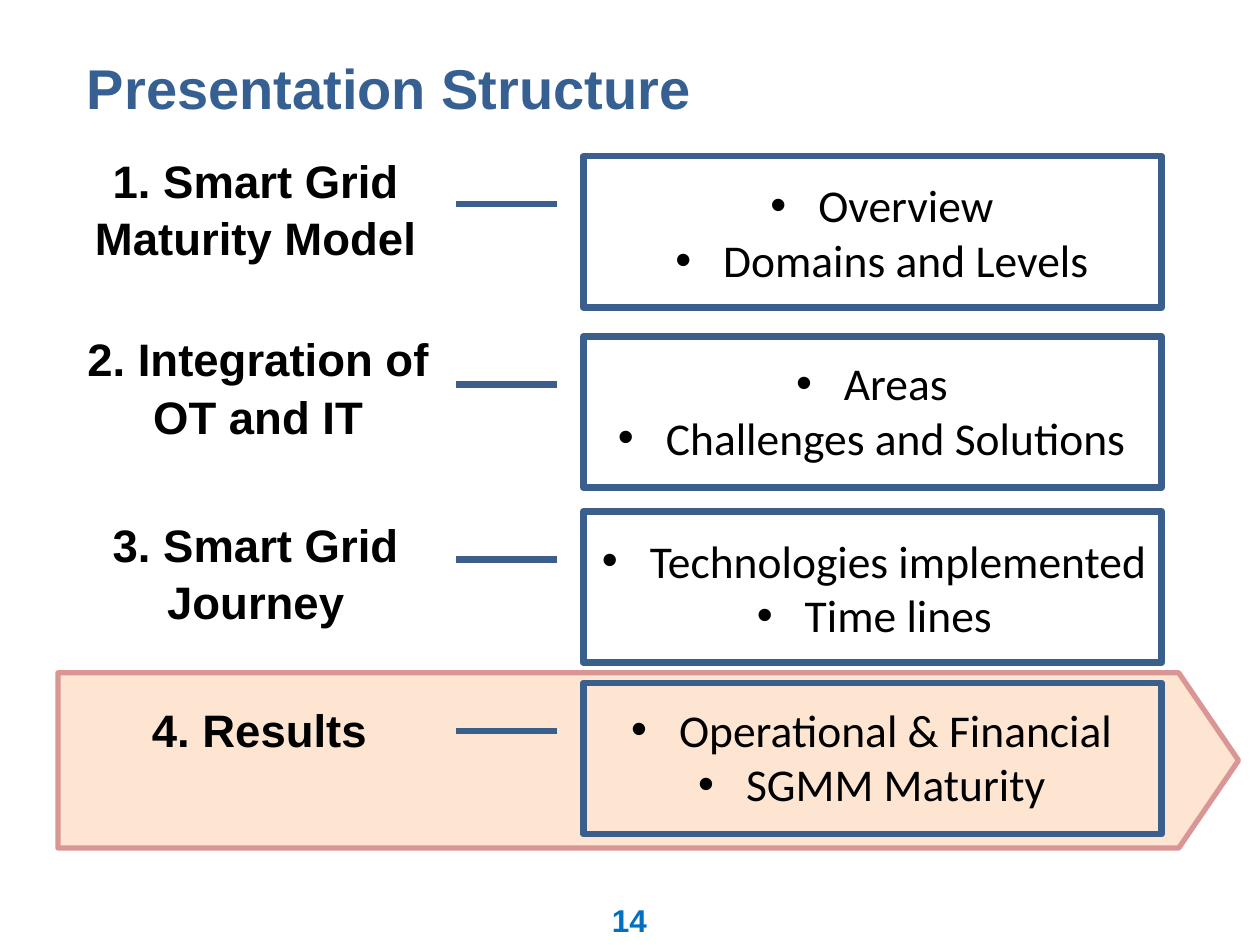
from dataclasses import dataclass

from lxml.etree import SubElement
from pptx import Presentation
from pptx.dml.color import RGBColor
from pptx.enum.shapes import MSO_SHAPE as Shape
from pptx.enum.text import MSO_ANCHOR as Anchor, MSO_AUTO_SIZE as Fit, PP_ALIGN as Align
from pptx.oxml.ns import qn
from pptx.util import Inches, Pt

COLS, ROWS = 100, 75
HUES = {"title": "376092", "page": "0070C0", "text": "000000",
        "frame": "3A5F8C", "arrow": "FAC090", "edge": "D99694"}

deck = Presentation()
deck.slide_width, deck.slide_height = Inches(10), Inches(7.5)
UNIT_X, UNIT_Y = deck.slide_width / COLS, deck.slide_height / ROWS


@dataclass
class Box:
    """A place on the grid, in columns and rows."""
    x: float
    y: float
    w: float
    h: float

    def place(self) -> tuple:
        return (round(self.x * UNIT_X), round(self.y * UNIT_Y),
                round(self.w * UNIT_X), round(self.h * UNIT_Y))


@dataclass
class Part:
    """One row: its label, the frame's top and its list."""
    label: list
    spot: Box
    top: float
    points: list
    list_box: Box


PARTS = [
    Part(["1. Smart Grid Maturity Model"], Box(1.8, 11.4, 37, 10), 12.4,
         ["Overview", "Domains and Levels"], Box(47.4, 13.6, 44, 10)),
    Part(["2. Integration of", "OT and IT"], Box(2, 25.6, 37, 10), 26.7,
         ["Areas", "Challenges and Solutions"], Box(45.2, 27.7, 46.8, 10)),
    Part(["3. Smart Grid Journey"], Box(1.8, 40.3, 37, 11), 40.6,
         ["Technologies implemented", "Time lines"], Box(45.4, 41.8, 46.8, 10)),
    Part(["4. Results"], Box(2.1, 55, 37, 6), 54.2,
         ["Operational & Financial", "SGMM Maturity"], Box(45.2, 55.2, 46.8, 10)),
]


def tint(name: str) -> RGBColor:
    return RGBColor.from_string(HUES[name])


def move(shape, box: Box) -> None:
    shape.left, shape.top, shape.width, shape.height = box.place()


def write(shape, lines: list, size: int, hue: str, face: str = "Arial",
          bold: bool = True, align=Align.CENTER, anchor=Anchor.TOP,
          space: float = 1, dots: bool = False) -> None:
    frame = shape.text_frame
    frame.word_wrap = True
    frame.auto_size = Fit.SHAPE_TO_FIT_TEXT if dots else Fit.NONE
    frame.vertical_anchor = anchor
    for i, line in enumerate(lines):
        para = frame.paragraphs[0] if i == 0 else frame.add_paragraph()
        props = para._p.get_or_add_pPr()
        props.set("marL", str(Inches(0.5) if dots else 0))
        props.set("indent", str(Inches(-0.38) if dots else 0))
        para.alignment = align
        para.line_spacing = space
        para.space_before = Pt(0)
        if dots:
            SubElement(props, qn("a:buFont")).set("typeface", "Arial")
            SubElement(props, qn("a:buChar")).set("char", "•")
        else:
            SubElement(props, qn("a:buNone"))
        run = para.add_run()
        run.text = line
        font = run.font
        font.name, font.size, font.bold = face, Pt(size), bold
        font.color.rgb = tint(hue)


def label(shape, part: Part) -> None:
    write(shape, part.label, 26, "text", space=1.05)


def outline(shape, hue: str, width: float) -> None:
    shape.shadow.inherit = False
    shape.line.color.rgb = tint(hue)
    shape.line.width = Pt(width)


def draw_part(shapes, part: Part) -> None:
    # Frame whose callout line points at the label
    frame = shapes.add_shape(Shape.LINE_CALLOUT_1,
                             *Box(46.3, part.top, 45.9, 12).place())
    for i, value in enumerate((0.317, -0.045, 0.317, -0.221)):
        frame.adjustments[i] = value
    frame.fill.background()
    outline(frame, "frame", 3.75)
    # List inside the frame
    text = shapes.add_textbox(*part.list_box.place())
    write(text, part.points, 26, "text", "Calibri", bold=False, dots=True)


def draw_arrow(shapes) -> None:
    arrow = shapes.add_shape(Shape.PENTAGON, *Box(4.6, 53.4, 93.7, 13.9).place())
    arrow.adjustments[0] = 0.341
    arrow.fill.solid()
    arrow.fill.fore_color.rgb = tint("arrow")
    fill = arrow._element.spPr.find(qn("a:solidFill"))
    SubElement(fill[0], qn("a:alpha")).set("val", "40000")
    outline(arrow, "edge", 3)


def main() -> None:
    slide = deck.slides.add_slide(deck.slide_layouts[1])
    shapes = slide.shapes

    # Title and page number
    move(shapes.title, Box(5.9, 3, 90, 7.8))
    write(shapes.title, ["Presentation Structure"], 32, "title",
          align=Align.LEFT, anchor=Anchor.MIDDLE)
    page = shapes.add_textbox(*Box(38.3, 71, 23.3, 4).place())
    write(page, ["14"], 18, "page", anchor=Anchor.MIDDLE)

    # Arrow that marks the current part
    draw_arrow(shapes)

    # First part has its label in the body placeholder
    first, *rest = PARTS
    body = slide.placeholders[1]
    move(body, first.spot)
    label(body, first)
    draw_part(shapes.add_group_shape().shapes, first)

    # Other parts
    for part in rest:
        group = shapes.add_group_shape().shapes
        label(group.add_textbox(*part.spot.place()), part)
        draw_part(group, part)

    deck.save("out.pptx")


if __name__ == "__main__":
    main()
